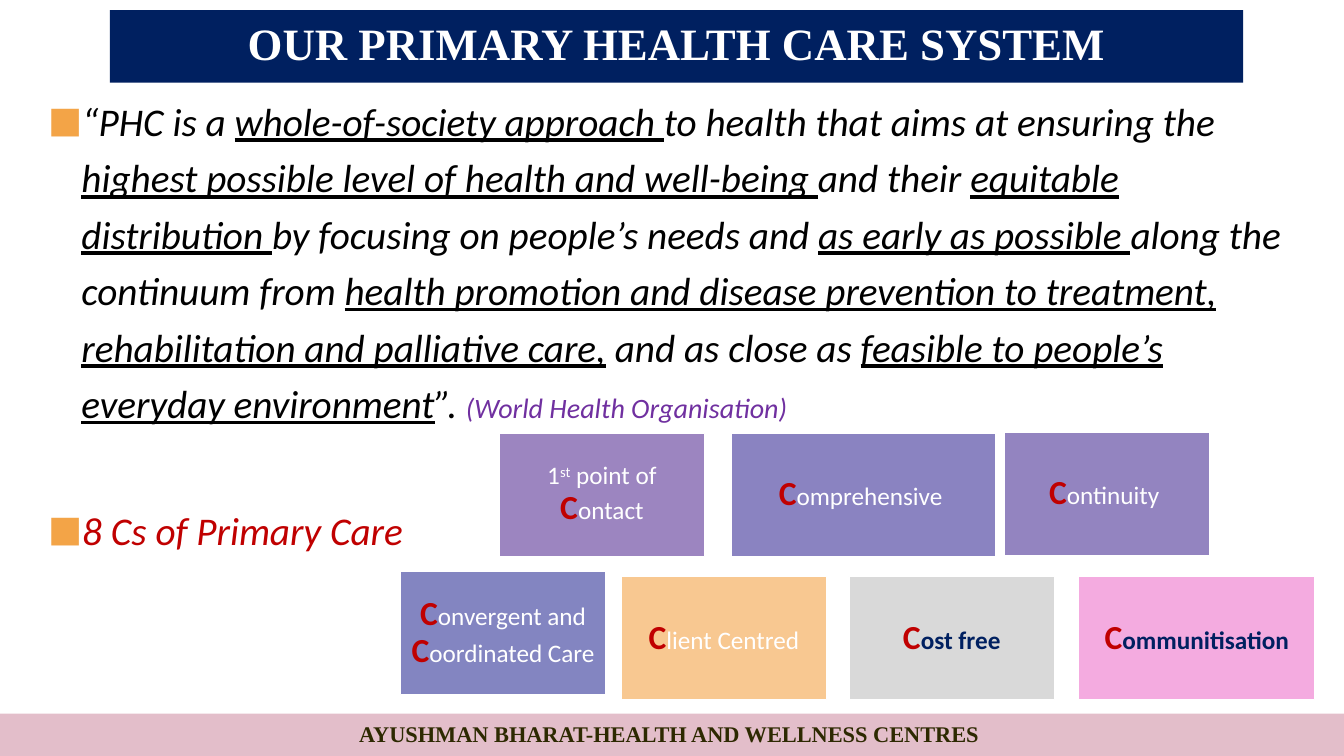
from lxml import etree
from pptx import Presentation
from pptx.dml.color import RGBColor
from pptx.enum.shapes import MSO_SHAPE
from pptx.enum.text import MSO_ANCHOR, PP_ALIGN
from pptx.oxml.ns import qn
from pptx.util import Inches, Pt

RECTANGLE = MSO_SHAPE.RECTANGLE
MIDDLE = MSO_ANCHOR.MIDDLE
CENTER = PP_ALIGN.CENTER

WHITE = RGBColor(0xFF, 0xFF, 0xFF)
BLACK = RGBColor(0, 0, 0)
NAVY = RGBColor(0x00, 0x20, 0x60)
RED = RGBColor(0xC0, 0x00, 0x00)
PURPLE = RGBColor(0x70, 0x30, 0xA0)
ROSE = RGBColor(0xE3, 0xBE, 0xCA)
OLIVE = RGBColor(0x2D, 0x29, 0x01)
ORANGE = RGBColor(0xF3, 0xA4, 0x47)
MAUVE = RGBColor(0x9C, 0x85, 0xC0)
LILAC = RGBColor(0x93, 0x84, 0xC0)
VIOLET = RGBColor(0x8A, 0x83, 0xC1)
PERIWINKLE = RGBColor(0x83, 0x85, 0xC1)
PEACH = RGBColor(0xF8, 0xC8, 0x91)
GREY = RGBColor(0xD9, 0xD9, 0xD9)
PINK = RGBColor(0xF4, 0xAB, 0xE0)

TITLE = {"name": "Times New Roman", "size": Pt(32), "bold": True, "color": WHITE}
FOOTER = {**TITLE, "size": Pt(16), "color": OLIVE}
BODY = {"name": "Calibri", "size": Pt(28), "italic": True, "color": BLACK}
UNDERLINED = {**BODY, "underline": True}
SOURCE = {**BODY, "size": Pt(20), "color": PURPLE}
HEADING = {**BODY, "color": RED}
INITIAL = {"name": "Calibri", "size": Pt(24), "bold": True, "color": RED}
LIGHT = {"name": "Calibri", "size": Pt(18), "bold": False, "color": WHITE}
STRONG = {**LIGHT, "bold": True, "color": NAVY}
RAISED = {**LIGHT, "baseline": "30000"}

QUOTE = [
    ("“PHC is a ", BODY),
    ("whole-of-society approach ", UNDERLINED),
    ("to health that aims at ensuring the ", BODY),
    ("highest possible level of health and well-being ", UNDERLINED),
    ("and their ", BODY),
    ("equitable distribution ", UNDERLINED),
    ("by focusing on people’s needs and ", BODY),
    ("as early as possible ", UNDERLINED),
    ("along the continuum from ", BODY),
    ("health promotion and disease prevention to treatment, "
     "rehabilitation and palliative care,", UNDERLINED),
    (" and as close as ", BODY),
    ("feasible to people’s everyday environment", UNDERLINED),
    ("”. ", BODY),
    ("(World Health Organisation)", SOURCE),
]

CARD_HEIGHT = 1.22
# left, top, width, fill, spans
CARDS = [
    (4.95, 4.3, 2.04, MAUVE, [("1", LIGHT), ("st", RAISED), (" point of ", LIGHT),
                              ("C", INITIAL), ("ontact", LIGHT)]),
    (9.96, 4.29, 2.04, LILAC, [("C", INITIAL), ("ontinuity ", LIGHT)]),
    (7.25, 4.3, 2.63, VIOLET, [("C", INITIAL), ("omprehensive ", LIGHT)]),
    (3.97, 5.67, 2.04, PERIWINKLE, [("C", INITIAL), ("onvergent and ", LIGHT),
                                    ("C", INITIAL), ("oordinated Care ", LIGHT)]),
    (6.16, 5.72, 2.04, PEACH, [("C", INITIAL), ("lient Centred", LIGHT)]),
    (8.42, 5.72, 2.04, GREY, [("C", INITIAL), ("ost free", STRONG)]),
    (10.7, 5.72, 2.34, PINK, [("C", INITIAL), ("ommunitisation", STRONG)]),
]


def add_spans(para, spans):
    for text, style in spans:
        span = para.add_run()
        span.text = text
        for key, value in style.items():
            if key == "color":
                span.font.color.rgb = value
            elif key == "baseline":
                span.font._element.set(key, value)
            else:
                setattr(span.font, key, value)


def add_box(page, left, top, width, height, fill, spans, outline=None, inset=0.1):
    """Add a filled rectangle with one centred paragraph."""
    box = page.shapes.add_shape(RECTANGLE, Inches(left), Inches(top),
                                Inches(width), Inches(height))
    box.shadow.inherit = False
    box.fill.solid()
    box.fill.fore_color.rgb = fill
    if outline is None:
        box.line.fill.background()
    else:
        box.line.color.rgb = outline
        box.line.width = Pt(1)
    frame = box.text_frame
    frame.word_wrap = True
    frame.vertical_anchor = MIDDLE
    for side in ("left", "top", "right", "bottom"):
        setattr(frame, f"margin_{side}", Inches(inset))
    para = frame.paragraphs[0]
    para.alignment = CENTER
    para.line_spacing = 0.9
    add_spans(para, spans)


def add_square_bullet(para):
    properties = para._p.get_or_add_pPr()
    properties.set("marL", str(Inches(0.33)))
    properties.set("indent", str(-Inches(0.33)))
    color = etree.SubElement(properties, qn("a:buClr"))
    etree.SubElement(color, qn("a:srgbClr"), val=str(ORANGE))
    etree.SubElement(properties, qn("a:buSzPct"), val="92000")
    etree.SubElement(properties, qn("a:buFont"), typeface="Calibri")
    etree.SubElement(properties, qn("a:buChar"), char="■")


def add_bullets(page):
    box = page.shapes.add_textbox(Inches(0.38), Inches(0.82), Inches(12.67), Inches(4.78))
    frame = box.text_frame
    frame.word_wrap = True
    quote, heading = frame.paragraphs[0], frame.add_paragraph()
    for para, space_before, spans in (
        (quote, 5.6, QUOTE),
        (heading, 44, [("8 Cs of Primary Care", HEADING)]),
    ):
        para.line_spacing = 1.2
        para.space_before = Pt(space_before)
        para.space_after = Pt(6)
        add_square_bullet(para)
        add_spans(para, spans)


def main():
    deck = Presentation()
    deck.slide_width, deck.slide_height = Inches(13.33), Inches(7.5)
    page = deck.slides.add_slide(deck.slide_layouts[6])
    add_box(page, 1.09, 0.1, 11.24, 0.72, NAVY,
            [("OUR PRIMARY HEALTH CARE SYSTEM", TITLE)], inset=0.05)
    add_box(page, 0, 7.08, 13.33, 0.42, ROSE,
            [("AYUSHMAN BHARAT-HEALTH AND WELLNESS CENTRES ", FOOTER)], inset=0.05)
    add_bullets(page)
    for left, top, width, fill, spans in CARDS:
        add_box(page, left, top, width, CARD_HEIGHT, fill, spans, outline=WHITE)
    deck.save("out.pptx")


if __name__ == "__main__":
    main()
